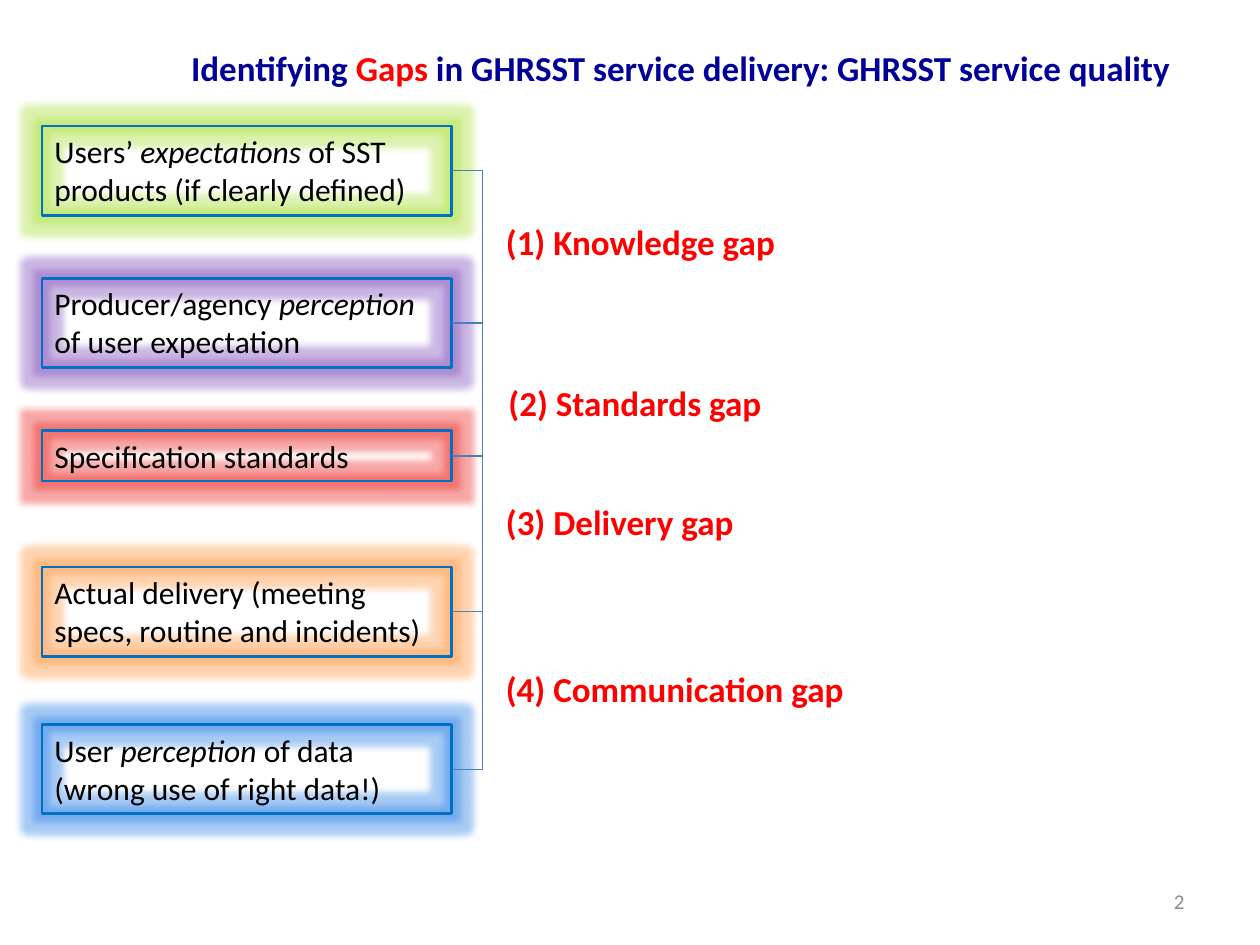
from dataclasses import dataclass
from itertools import pairwise
from lxml.etree import SubElement
from pptx import Presentation
from pptx.dml.color import RGBColor
from pptx.enum.shapes import MSO_CONNECTOR, MSO_SHAPE
from pptx.enum.text import MSO_ANCHOR, PP_ALIGN
from pptx.oxml.ns import qn
from pptx.util import Pt


@dataclass(frozen=True)
class Theme:
    """Colours, font and type sizes of the slide."""
    font: str = "Calibri"
    ink: str = "000000"
    navy: str = "000099"
    red: str = "FF0000"
    grey: str = "8C8C8C"
    edge: str = "0070C0"
    link: str = "4B7EBC"
    head: int = 20
    body: int = 18
    note: int = 12


THEME = Theme()
LEFT, WIDTH = 24, 234

STAGES = [
    (72, 51, "A8DF35", [[("Users’ ", False), ("expectations", True),
                         (" of SST products (if clearly defined)", False)]]),
    (159, 51, "7E4CBA", [[("Producer/agency ", False), ("perception", True),
                          (" of user expectation", False)]]),
    (246, 29, "EB2722", [[("Specification standards", False)]]),
    (324, 51, "FF953E", [[("Actual delivery (meeting specs, routine and incidents)", False)]]),
    (414, 51, "267DE6", [[("User ", False), ("perception", True), (" of data", False)],
                         [("(wrong use of right data!)", False)]]),
]

GAPS = [
    (282, 122.5, 170, "(1) Knowledge gap"),
    (283.5, 214.5, 161, "(2) Standards gap"),
    (282, 282.5, 146, "(3) Delivery gap"),
    (282, 378, 210, "(4) Communication gap"),
]


def add_run(para, text, size, color, bold=False, italic=False):
    """Append one formatted run to a paragraph."""
    run = para.add_run()
    run.text = text
    font = run.font
    font.name, font.size = THEME.font, Pt(size)
    font.bold, font.italic = bold, italic
    font.color.rgb = RGBColor.from_string(color)


def add_glow(shape, color):
    """Give a shape a soft coloured glow."""
    effects = shape._element.spPr.find(qn("a:effectLst"))
    glow = SubElement(effects, qn("a:glow"), rad=str(Pt(8)))
    tint = SubElement(glow, qn("a:srgbClr"), val=color)
    SubElement(tint, qn("a:alpha"), val="40000")


def add_title(slide):
    """Fill and place the title."""
    title = slide.shapes.title
    title.left, title.top, title.width, title.height = Pt(102), Pt(23), Pt(579), Pt(32)
    frame = title.text_frame
    frame.word_wrap = False
    frame.vertical_anchor = MSO_ANCHOR.TOP
    para = frame.paragraphs[0]
    para.alignment = PP_ALIGN.LEFT
    for text, color in [("Identifying ", THEME.navy), ("Gaps", THEME.red),
                        (" in GHRSST service delivery: GHRSST service quality", THEME.navy)]:
        add_run(para, text, THEME.head, color, bold=True)


def add_stage(slide, top, height, color, lines):
    """Draw one glowing stage box and return it."""
    box = slide.shapes.add_shape(MSO_SHAPE.RECTANGLE, Pt(LEFT), Pt(top), Pt(WIDTH), Pt(height))
    box.fill.background()
    box.line.color.rgb = RGBColor.from_string(THEME.edge)
    box.line.width = Pt(1.5)
    box.shadow.inherit = False
    add_glow(box, color)
    frame = box.text_frame
    frame.word_wrap = True
    frame.vertical_anchor = MSO_ANCHOR.TOP
    for index, runs in enumerate(lines):
        para = frame.add_paragraph() if index else frame.paragraphs[0]
        para.alignment = PP_ALIGN.LEFT
        for text, italic in runs:
            add_run(para, text, THEME.body, THEME.ink, italic=italic)
    return box


def add_link(slide, upper, lower):
    """Join the right sides of two boxes with a bracket 18 points out."""
    link = slide.shapes.add_connector(MSO_CONNECTOR.ELBOW, 0, 0, 0, 0)
    link.begin_connect(upper, 3)
    link.end_connect(lower, 3)
    link.end_x = link.begin_x + Pt(1)
    link.line.color.rgb = RGBColor.from_string(THEME.link)
    link.line.width = Pt(0.75)
    props = link._element.spPr
    SubElement(props, qn("a:effectLst"))
    guides = props.find(qn("a:prstGeom")).get_or_add_avLst()
    SubElement(guides, qn("a:gd"), name="adj1", fmla="val 1800000")


def add_label(slide, left, top, width, text):
    """Write the name of a gap."""
    frame = slide.shapes.add_textbox(Pt(left), Pt(top), Pt(width), Pt(31.5)).text_frame
    frame.word_wrap = False
    add_run(frame.paragraphs[0], text, THEME.head, THEME.red, bold=True)


def add_number(slide):
    """Write the page number at the lower right."""
    frame = slide.shapes.add_textbox(Pt(516), Pt(500.5), Pt(168), Pt(29)).text_frame
    frame.word_wrap = True
    frame.vertical_anchor = MSO_ANCHOR.MIDDLE
    para = frame.paragraphs[0]
    para.alignment = PP_ALIGN.RIGHT
    add_run(para, "2", THEME.note, THEME.grey)


def main():
    """Build and save the slide."""
    deck = Presentation()
    deck.slide_width, deck.slide_height = Pt(720), Pt(540)
    slide = deck.slides.add_slide(deck.slide_layouts[5])
    add_title(slide)
    boxes = [add_stage(slide, *stage) for stage in STAGES]
    for upper, lower in pairwise(boxes):
        add_link(slide, upper, lower)
    for gap in GAPS:
        add_label(slide, *gap)
    add_number(slide)
    deck.save("out.pptx")


if __name__ == "__main__":
    main()
